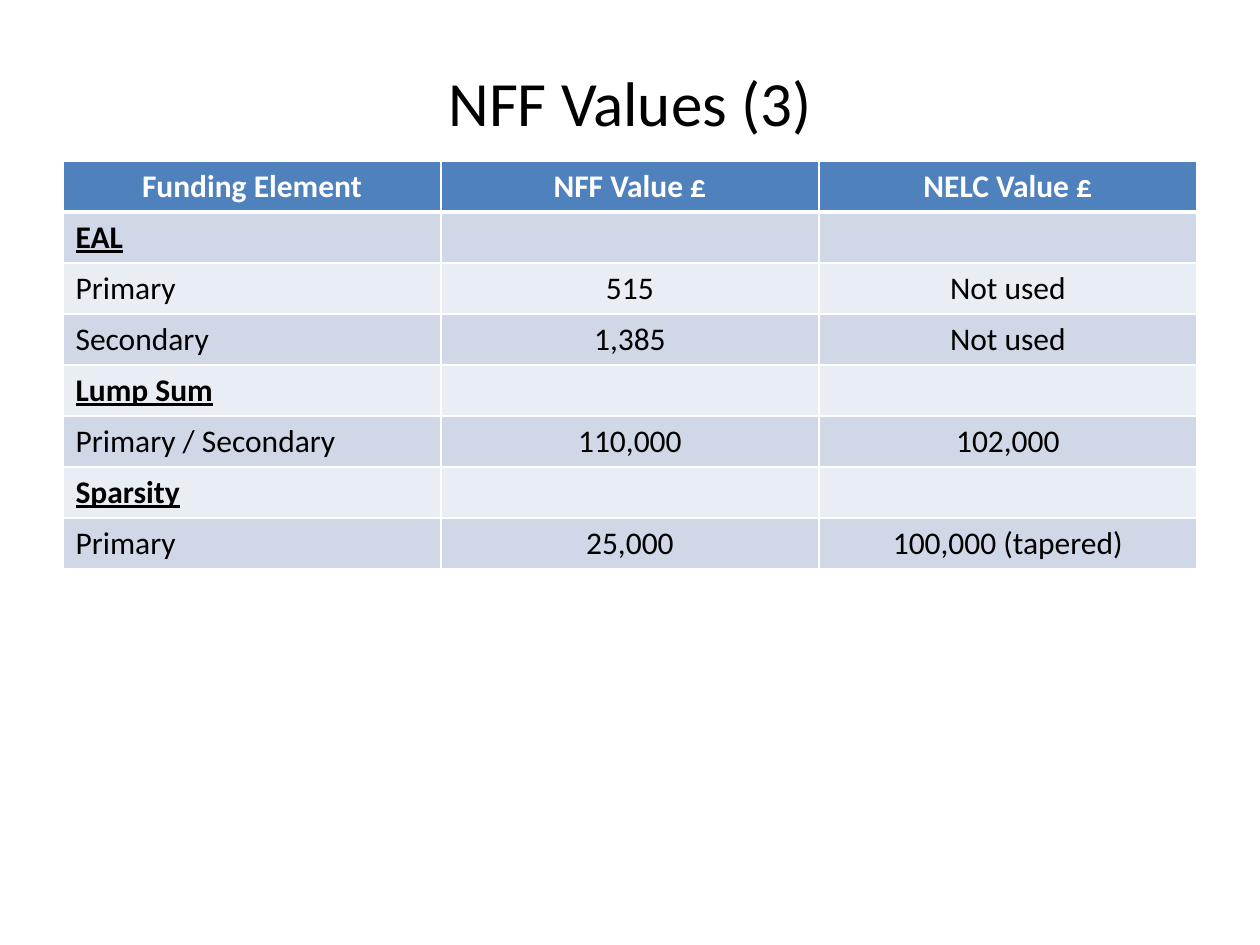
from lxml import etree
from pptx import Presentation
from pptx import util as u
from pptx.dml.color import RGBColor
from pptx.enum import text
from pptx.oxml import ns

PX = 914400 // 126
COLORS = {"ink": "000000", "white": "FFFFFF", "header": "4F81BD",
          "band_dark": "D0D8E8", "band_light": "E9EDF4"}
ROWS = [
    ("Funding Element", "NFF Value £", "NELC Value £"),
    ("EAL", "", ""),
    ("Primary", "515", "Not used"),
    ("Secondary", "1,385", "Not used"),
    ("Lump Sum", "", ""),
    ("Primary / Secondary", "110,000", "102,000"),
    ("Sparsity", "", ""),
    ("Primary", "25,000", "100,000 (tapered)"),
]


def px(n):
    return u.Emu(n * PX)


def rgb(name):
    return RGBColor.from_string(COLORS[name])


def write(tf, words, font="Calibri", size=18, color="ink", bold=False,
          underline=False, align=text.PP_ALIGN.CENTER):
    p = tf.paragraphs[0]
    p.alignment = align
    p.font.size = u.Pt(size)
    if words:
        r = p.add_run()
        r.text = words
        r.font.name = font
        r.font.size = u.Pt(size)
        r.font.bold = bold
        r.font.underline = underline
        r.font.color.rgb = rgb(color)


class Deck:
    def __init__(self, prs):
        self.s = prs.slides.add_slide(prs.slide_layouts[6])

    def title(self, words, x, y, w, h):
        tf = self.s.shapes.add_textbox(px(x), px(y), px(w), px(h)).text_frame
        tf.word_wrap = True
        tf.vertical_anchor = text.MSO_ANCHOR.MIDDLE
        write(tf, words, size=36)

    def border(self, cell, side, width):
        ln = etree.SubElement(cell._tc.get_or_add_tcPr(), ns.qn(f"a:ln{side}"),
                              w=str(u.Pt(width)))
        fill = etree.SubElement(ln, ns.qn("a:solidFill"))
        etree.SubElement(fill, ns.qn("a:srgbClr"), val=COLORS["white"])

    def table(self, rows, x, y, w, row_h):
        table = self.s.shapes.add_table(len(rows), len(rows[0]), px(x), px(y),
                                        px(w), px(row_h * len(rows))).table
        table.horz_banding = False
        for i, row in enumerate(rows):
            table.rows[i].height = px(row_h)
            head = i == 0
            section = not head and not any(row[1:])
            band = "header" if head else "band_dark" if i % 2 else "band_light"
            for j, words in enumerate(row):
                cell = table.cell(i, j)
                for side in "LRTB":
                    thick = (side == "B" and head) or (side == "T" and i == 1)
                    self.border(cell, side, 3 if thick else 1)
                cell.fill.solid()
                cell.fill.fore_color.rgb = rgb(band)
                left = j == 0 and not head
                write(cell.text_frame, words, color="white" if head else "ink",
                      bold=head or section, underline=section,
                      align=text.PP_ALIGN.LEFT if left else text.PP_ALIGN.CENTER)


def main():
    prs = Presentation()
    prs.slide_width, prs.slide_height = u.Inches(10), u.Inches(7.5)
    deck = Deck(prs)
    deck.title("NFF Values (3)", 63, 38, 1134, 127)
    deck.table(ROWS, 63, 161, 1134, 51)
    prs.save("out.pptx")


if __name__ == "__main__":
    main()
